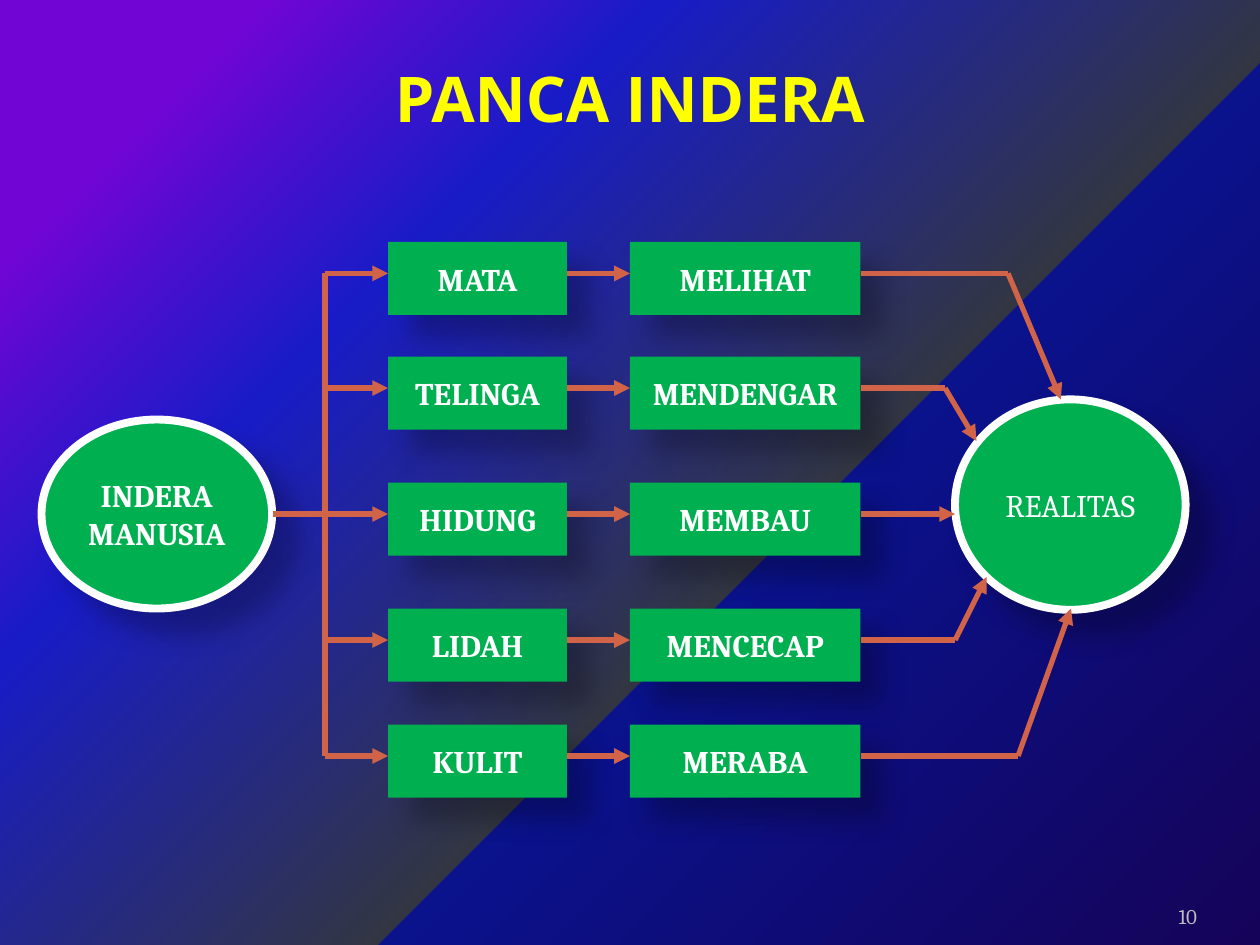
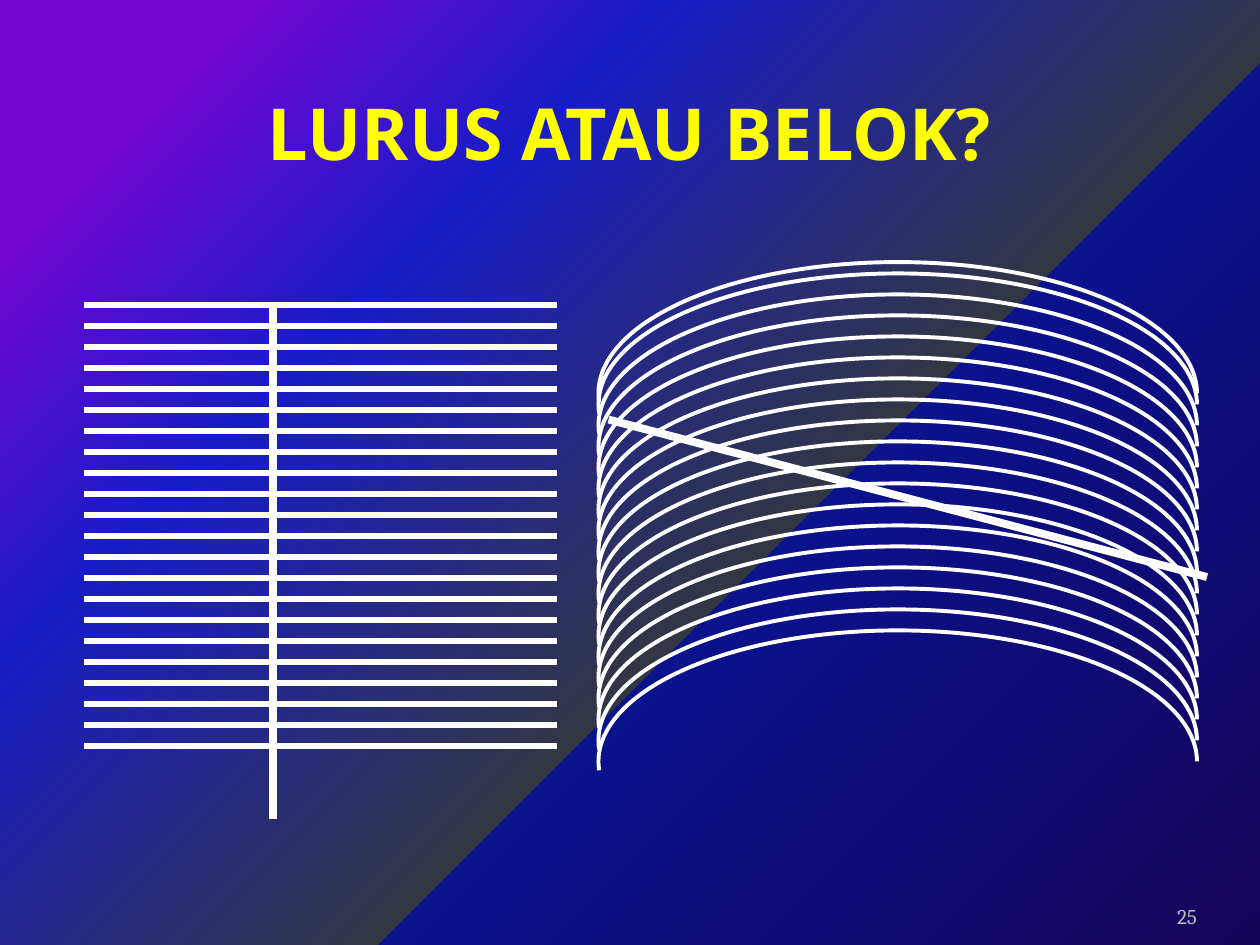
"""Builds two slides on the five senses and an optical illusion."""
from lxml.etree import SubElement
from pptx import Presentation
from pptx.dml.color import RGBColor
from pptx.enum.shapes import MSO_CONNECTOR, MSO_SHAPE
from pptx.enum.text import MSO_ANCHOR as Anchor, PP_ALIGN as Align
from pptx.oxml import parse_xml
from pptx.oxml.ns import nsdecls, qn
from pptx.util import Inches, Pt

WHITE = RGBColor(0xFF, 0xFF, 0xFF)
YELLOW = RGBColor(0xFF, 0xFF, 0x00)
GREEN = RGBColor(0x00, 0xB0, 0x50)
ORANGE = RGBColor(0xD1, 0x63, 0x49)
GREY = RGBColor(0xBD, 0xBD, 0xBD)
BLACK = RGBColor(0x00, 0x00, 0x00)
BACKGROUND_STOPS = [
    (0, RGBColor(0x15, 0x03, 0x59)),
    (40, RGBColor(0x0A, 0x12, 0x8C)),
    (40, RGBColor(0x32, 0x36, 0x43)),
    (70, RGBColor(0x18, 0x1C, 0xC7)),
    (88, RGBColor(0x70, 0x05, 0xD4)),
]
TITLE_FONT = "Open Sans"
BODY_FONT = "Cambria"


def write_text(frame, text, size=18, font=BODY_FONT, color=WHITE, bold=False,
               align=Align.CENTER, anchor=Anchor.MIDDLE, wrap=False):
    """Fill a text frame, one paragraph for each line of text."""
    frame.text = text
    frame.word_wrap = wrap
    frame.vertical_anchor = anchor
    for paragraph in frame.paragraphs:
        paragraph.alignment = align
        for run in paragraph.runs:
            run.font.size = Pt(size)
            run.font.name = font
            run.font.bold = bold
            run.font.color.rgb = color


class Deck:
    """Holds the presentation, its style and the current slide."""

    def __init__(self):
        """Set the slide size and the shared background."""
        self.presentation = Presentation()
        self.presentation.slide_width = Inches(10)
        self.presentation.slide_height = Inches(7.5)
        self.slide = None
        self.set_background()

    def set_background(self):
        """Give the master a gradient that spreads from the bottom right."""
        master = self.presentation.slide_master
        master.background.fill.gradient()
        gradient = next(master.element.iter(qn("a:gradFill")))
        stops = "".join(
            f'<a:gs pos="{position * 1000}"><a:srgbClr val="{color}"/></a:gs>'
            for position, color in BACKGROUND_STOPS)
        gradient.getparent().replace(gradient, parse_xml(
            f'<a:gradFill {nsdecls("a")} rotWithShape="1"><a:gsLst>{stops}</a:gsLst>'
            '<a:path path="circle"><a:fillToRect l="100000" t="100000"/></a:path>'
            '</a:gradFill>'))

    def add_slide(self, title, number, top, height, size):
        """Start a slide with its title and number."""
        layout = self.presentation.slide_layouts[5]
        self.slide = self.presentation.slides.add_slide(layout)
        heading = self.slide.shapes.title
        heading.left, heading.top = Inches(0.5), Inches(top)
        heading.width, heading.height = Inches(9), Inches(height)
        write_text(heading.text_frame, title, size=size, font=TITLE_FONT,
                   color=YELLOW, bold=True, wrap=True)
        footer = self.slide.shapes.add_textbox(
            Inches(8.67), Inches(7.02), Inches(0.83), Inches(0.4))
        footer.text_frame.margin_left = footer.text_frame.margin_right = 0
        write_text(footer.text_frame, number, size=12, color=GREY,
                   align=Align.RIGHT, anchor=Anchor.BOTTOM, wrap=True)

    def add_node(self, text, left, top, width, height,
                 kind=MSO_SHAPE.RECTANGLE, bold=True):
        """Add a green shape with a soft shadow; ellipses get a white rim."""
        shape = self.slide.shapes.add_shape(
            kind, Inches(left), Inches(top), Inches(width), Inches(height))
        shape.fill.solid()
        shape.fill.fore_color.rgb = GREEN
        if kind == MSO_SHAPE.OVAL:
            shape.line.color.rgb = WHITE
            shape.line.width = Pt(4.5)
        else:
            shape.line.fill.background()
        shape.shadow.inherit = False
        effects = shape.element.spPr.find(qn("a:effectLst"))
        shadow = SubElement(effects, qn("a:outerShdw"), blurRad=str(Pt(15)),
                            dist=str(Pt(18)), dir=str(45 * 60000),
                            algn="ctr", rotWithShape="0")
        color = SubElement(shadow, qn("a:srgbClr"), val=str(BLACK))
        SubElement(color, qn("a:alpha"), val="26000")
        write_text(shape.text_frame, text, bold=bold)

    def add_line(self, start, end, color=WHITE, width=3, arrow=False):
        """Add a straight line, with an arrowhead at its end if asked."""
        line = self.slide.shapes.add_connector(
            MSO_CONNECTOR.STRAIGHT, *map(Inches, (*start, *end)))
        line.line.color.rgb = color
        line.line.width = Pt(width)
        if arrow:
            SubElement(line.line._get_or_add_ln(), qn("a:tailEnd"), type="triangle")
        SubElement(line.element.spPr, qn("a:effectLst"))

    def add_arc(self, left, top, width, height):
        """Add the upper half of an ellipse as a white outline."""
        arc = self.slide.shapes.add_shape(
            MSO_SHAPE.ARC, Inches(left), Inches(top), Inches(width), Inches(height))
        arc.adjustments[0] = 106.98
        arc.adjustments[1] = 0
        arc.fill.background()
        arc.line.color.rgb = WHITE
        arc.line.width = Pt(2.25)
        arc.shadow.inherit = False


def build_senses(deck):
    """Lead from the human senses through organs and actions to reality."""
    deck.add_slide("PANCA INDERA", "10", top=0.3, height=0.95, size=36)
    trunk, organ_left, organ_width = 2.58, 3.08, 1.42
    action_left, action_width, box_height = 5, 1.83, 0.58
    organ_right, action_right = organ_left + organ_width, action_left + action_width
    rows = [
        ("MATA", "MELIHAT", 2.17, 8, (8.42, 3.17)),
        ("TELINGA", "MENDENGAR", 3.08, 7.5, (7.75, 3.5)),
        ("HIDUNG", "MEMBAU", 4.08, None, (7.58, 4.08)),
        ("LIDAH", "MENCECAP", 5.08, 7.58, (7.83, 4.58)),
        ("KULIT", "MERABA", 6, 8.08, (8.5, 4.83)),
    ]
    for organ, action, y, _, _ in rows:
        deck.add_node(organ, organ_left, y - 0.25, organ_width, box_height)
        deck.add_node(action, action_left, y - 0.25, action_width, box_height)
    deck.add_node("REALITAS", 7.58, 3.17, 1.83, 1.67, MSO_SHAPE.OVAL, bold=False)
    deck.add_node("INDERA\nMANUSIA", 0.33, 3.33, 1.83, 1.5, MSO_SHAPE.OVAL)

    deck.add_line((trunk, rows[0][2]), (trunk, rows[-1][2]), ORANGE)
    for _, _, y, bend, target in rows:
        branch_start = trunk if bend else 2.17
        deck.add_line((branch_start, y), (organ_left, y), ORANGE, arrow=True)
        deck.add_line((organ_right, y), (action_left, y), ORANGE, arrow=True)
        last_start = (bend or action_right, y)
        if bend:
            deck.add_line((action_right, y), last_start, ORANGE)
        deck.add_line(last_start, target, ORANGE, arrow=True)


def build_illusion(deck):
    """Cross a set of straight lines and a set of arcs with thick lines."""
    deck.add_slide("LURUS ATAU BELOK?", "25", top=0.42, height=1.25, size=41)
    gap = 1 / 6
    for index in range(22):
        y = 2.42 + index * gap
        deck.add_line((0.67, y), (4.42, y))
    deck.add_line((2.17, 6.5), (2.17, 2.42), width=4.5)
    for top in [2.08] + [2.17 + index * gap for index in range(18)]:
        deck.add_arc(4.75, top, 4.75, 2.08)
    deck.add_line((9.58, 4.58), (4.83, 3.33), width=4.5)


def main():
    """Build both slides and save them."""
    deck = Deck()
    build_senses(deck)
    build_illusion(deck)
    deck.presentation.save("out.pptx")


if __name__ == "__main__":
    main()
